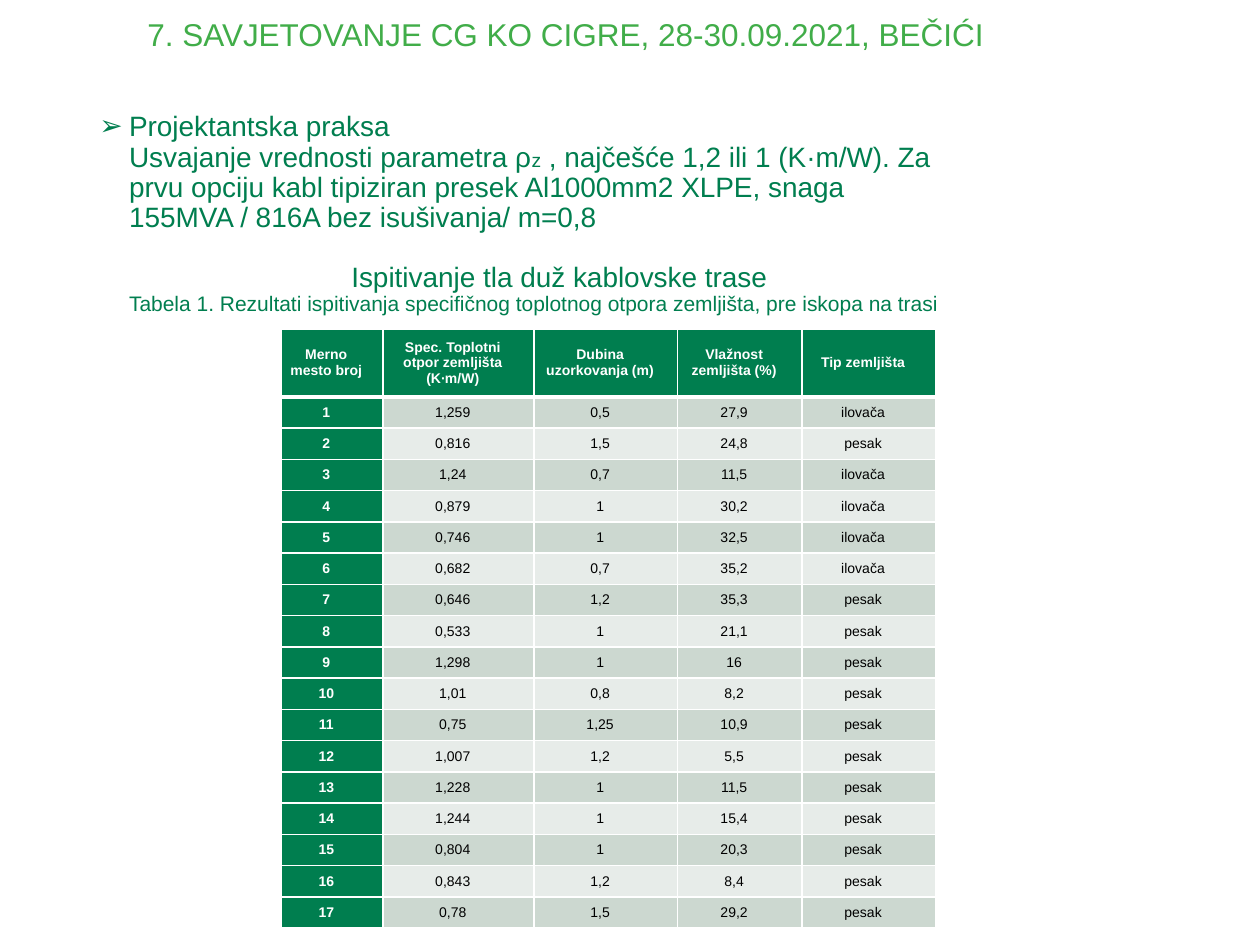
from lxml import etree
from pptx import Presentation
from pptx.dml.color import RGBColor
from pptx.enum.text import MSO_ANCHOR, PP_ALIGN
from pptx.oxml.ns import qn
from pptx.util import Pt

CENTER = PP_ALIGN.CENTER
MIDDLE, BOTTOM = MSO_ANCHOR.MIDDLE, MSO_ANCHOR.BOTTOM
FONT = "Arial"
GREEN, LIGHT_GREEN, WHITE, BLACK = "007E4F", "41AD49", "FFFFFF", "000000"
BANDS = ("CCD8D0", "E7ECE9")

CONFERENCE = "7. SAVJETOVANJE CG KO CIGRE, 28-30.09.2021, BEČIĆI"
PRACTICE = [
    ("Projektantska praksa\vUsvajanje vrednosti parametra ρ", 16),
    ("z", 11),
    (" , najčešće 1,2 ili 1 (K·m/W). Za prvu opciju kabl tipiziran presek "
     "Al1000mm2 XLPE, snaga 155MVA / 816A bez isušivanja/ m=0,8", 16),
]
TESTING = "Ispitivanje tla duž kablovske trase"
CAPTION = ("Tabela 1. Rezultati ispitivanja specifičnog toplotnog otpora "
           "zemljišta, pre iskopa na trasi")
HEADERS = ["Merno mesto broj", "Spec. Toplotni otpor zemljišta (K∙m/W)",
           "Dubina uzorkovanja (m)", "Vlažnost zemljišta (%)", "Tip zemljišta"]
SAMPLES = [
    ("1,259", "0,5", "27,9", "ilovača"),
    ("0,816", "1,5", "24,8", "pesak"),
    ("1,24", "0,7", "11,5", "ilovača"),
    ("0,879", "1", "30,2", "ilovača"),
    ("0,746", "1", "32,5", "ilovača"),
    ("0,682", "0,7", "35,2", "ilovača"),
    ("0,646", "1,2", "35,3", "pesak"),
    ("0,533", "1", "21,1", "pesak"),
    ("1,298", "1", "16", "pesak"),
    ("1,01", "0,8", "8,2", "pesak"),
    ("0,75", "1,25", "10,9", "pesak"),
    ("1,007", "1,2", "5,5", "pesak"),
    ("1,228", "1", "11,5", "pesak"),
    ("1,244", "1", "15,4", "pesak"),
    ("0,804", "1", "20,3", "pesak"),
    ("0,843", "1,2", "8,4", "pesak"),
    ("0,78", "1,5", "29,2", "pesak"),
]
COLUMN_WIDTHS = [58.2, 86.4, 82, 71.2, 76.2]
HEADER_HEIGHT, TABLE_HEIGHT = 38.9, 342.7


def rgb(color):
    return RGBColor.from_string(color)


def write(p, runs, color, size=16, bold=False, align=None, spacing=None,
          before=None, after=None, left=0, hanging=0, bullet=None):
    """Fill a paragraph with a string or a list of (text, size) runs."""
    if align is not None:
        p.alignment = align
    if spacing:
        p.line_spacing = spacing
    if before is not None:
        p.space_before = Pt(before)
    if after is not None:
        p.space_after = Pt(after)
    pPr = p._p.get_or_add_pPr()
    pPr.set("marL", str(Pt(left)))
    pPr.set("indent", str(Pt(-hanging)))
    if bullet:
        etree.SubElement(pPr, qn("a:buFont"), typeface=FONT)
        etree.SubElement(pPr, qn("a:buChar"), char=bullet)
    for text, run_size in [(runs, size)] if isinstance(runs, str) else runs:
        for i, line in enumerate(text.split("\v")):
            if i:
                p.add_line_break()
            r = p.add_run()
            r.text = line
            r.font.name = FONT
            r.font.size = Pt(run_size)
            r.font.bold = bold
            r.font.color.rgb = rgb(color)


def add_text_frame(s, left, top, width, height, anchor):
    tf = s.shapes.add_textbox(Pt(left), Pt(top), Pt(width), Pt(height)).text_frame
    tf.word_wrap = True
    tf.vertical_anchor = anchor
    return tf


def set_borders(cell, top=1, bottom=1):
    tcPr = cell._tc.get_or_add_tcPr()
    for side, width in (("L", 1), ("R", 1), ("T", top), ("B", bottom)):
        ln = etree.SubElement(tcPr, qn(f"a:ln{side}"), w=str(Pt(width)))
        fill = etree.SubElement(ln, qn("a:solidFill"))
        etree.SubElement(fill, qn("a:srgbClr"), val=WHITE)


def add_sample_table(s, left, top):
    rows = [HEADERS] + [(str(i), *row) for i, row in enumerate(SAMPLES, 1)]
    table = s.shapes.add_table(len(rows), len(HEADERS), Pt(left), Pt(top),
                               Pt(sum(COLUMN_WIDTHS)), Pt(TABLE_HEIGHT)).table
    table.horz_banding = False
    for column, width in zip(table.columns, COLUMN_WIDTHS):
        column.width = Pt(width)
    row_height = (TABLE_HEIGHT - HEADER_HEIGHT) / len(SAMPLES)
    for i, row in enumerate(rows):
        table.rows[i].height = Pt(row_height if i else HEADER_HEIGHT)
        for j, text in enumerate(row):
            heading = i == 0 or j == 0
            cell = table.cell(i, j)
            set_borders(cell, top=3 if i == 1 else 1, bottom=1 if i else 3)
            cell.fill.solid()
            cell.fill.fore_color.rgb = rgb(GREEN if heading else BANDS[(i - 1) % 2])
            cell.vertical_anchor = MIDDLE
            cell.margin_left, cell.margin_right = Pt(5), Pt(11.5)
            cell.margin_top = cell.margin_bottom = 0
            write(cell.text_frame.paragraphs[0], text, WHITE if heading else BLACK,
                  size=8, bold=heading, align=CENTER, after=6)


def main():
    prs = Presentation()
    prs.slide_width, prs.slide_height = Pt(720), Pt(540)
    s = prs.slides.add_slide(prs.slide_layouts[6])

    tf = add_text_frame(s, 49.7, 80, 499.7, 85, MIDDLE)
    write(tf.paragraphs[0], PRACTICE, GREEN, spacing=0.9, left=17, hanging=17, bullet="➢")
    write(tf.add_paragraph(), TESTING, GREEN, spacing=0.9, before=17, left=144)
    write(tf.add_paragraph(), CAPTION, GREEN, size=12, spacing=0.9, before=0, left=17)

    tf = add_text_frame(s, 0, 0, 646.6, 33.8, BOTTOM)
    write(tf.paragraphs[0], CONFERENCE, LIGHT_GREEN, size=18, align=CENTER, spacing=0.9)

    add_sample_table(s, 160.6, 187.9)
    prs.save("out.pptx")


if __name__ == "__main__":
    main()
